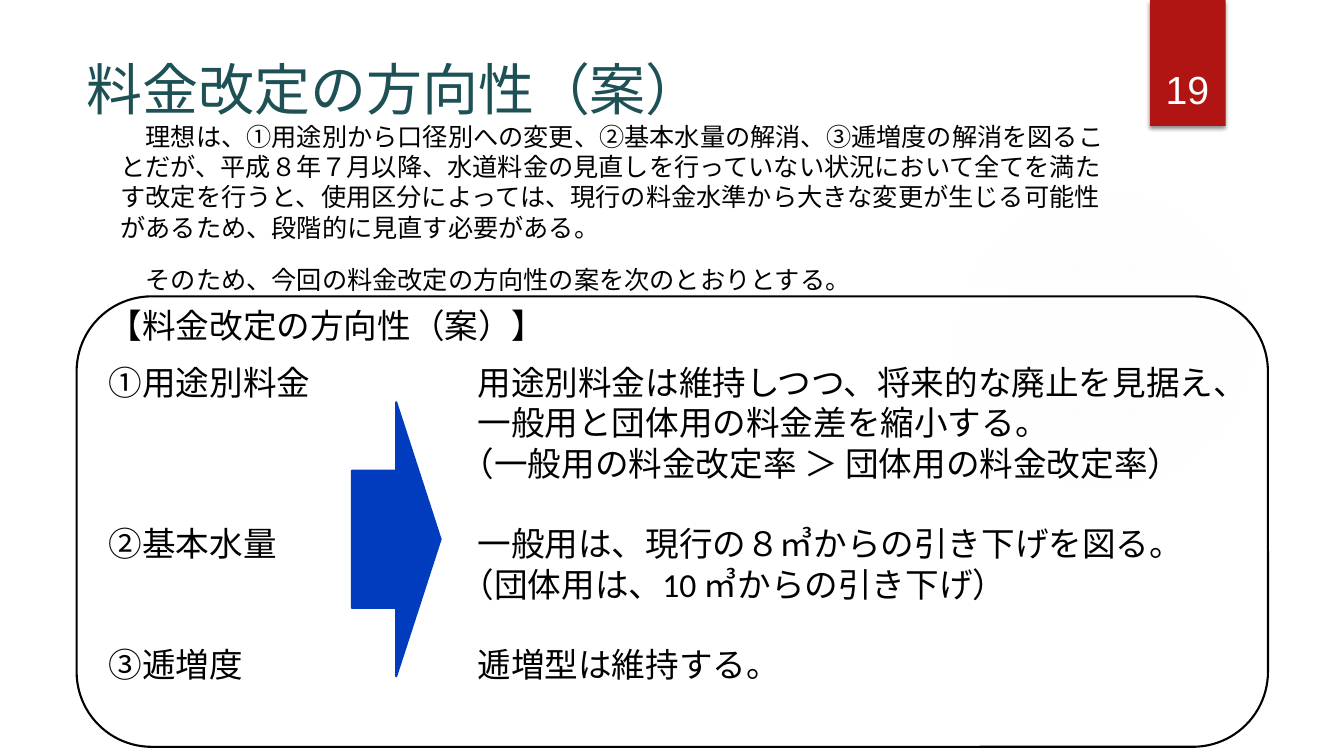
"""Build the slide on the direction of the water tariff revision."""
from dataclasses import dataclass, field
from typing import Any

import pptx
import pptx.dml.color
import pptx.enum.lang
import pptx.enum.shapes
import pptx.enum.text
import pptx.oxml
import pptx.oxml.ns
import pptx.util
from lxml import etree

Pt = pptx.util.Pt
SHAPE = pptx.enum.shapes.MSO_SHAPE
ANCHOR = pptx.enum.text.MSO_ANCHOR
ALIGN = pptx.enum.text.PP_ALIGN
qn = pptx.oxml.ns.qn


@dataclass(frozen=True)
class Theme:
    ink: str = "000000"
    title: str = "1E5155"
    ribbon: str = "B01513"
    arrow: str = "023CBE"
    glow: str = "F3F3F3"
    white: str = "FFFFFF"
    title_size: float = 40
    number_size: float = 28
    lead_size: float = 18
    body_size: float = 24
    outline: float = 1.5
    heading_font: str = "Calibri"
    lead_font: str = "Arial"


@dataclass(frozen=True)
class Para:
    text: str
    left: float = 0
    indent: float = 0
    fmt: dict[str, Any] = field(default_factory=dict)


@dataclass(frozen=True)
class Box:
    at: tuple[float, float, float, float]
    paras: list[Para]
    font: str
    size: float
    color: str
    anchor: Any = ANCHOR.BOTTOM


@dataclass(frozen=True)
class Figure:
    kind: Any
    at: tuple[float, float, float, float]
    fill: str = ""
    line: str = ""


THEME = Theme()
LINE = 28.8
HANG = 12


def gap(lines: int) -> dict[str, Any]:
    """Leave a number of body lines free above a paragraph."""
    return {"space_before": Pt(lines * LINE)}


GLOW = Figure(SHAPE.OVAL, (677.5, 131.8, 221.8, 221.8))
RIBBON = Figure(SHAPE.RECTANGLE, (821.5, 0, 54, 90), THEME.ribbon)
PANEL = Figure(SHAPE.ROUNDED_RECTANGLE, (54.7, 211.7, 851, 321.8), line=THEME.ink)
ARROW = Figure(SHAPE.RIGHT_ARROW, (251.3, 287.3, 63.4, 195.8), THEME.arrow, THEME.arrow)

TITLE = Box((54.7, 23, 462.2, 67.7), [Para("料金改定の方向性（案）")],
            THEME.heading_font, THEME.title_size, THEME.title)
NUMBER = Box((815, 23, 66.2, 60.5), [Para("19", fmt={"alignment": ALIGN.CENTER})],
             THEME.lead_font, THEME.number_size, THEME.white)
LEAD = Box((79, 73, 731.5, 141.1), [
    Para("理想は、①用途別から口径別への変更、②基本水量の解消、③逓増度の解消を図ることだが、"
         "平成８年７月以降、水道料金の見直しを行っていない状況において全てを満たす改定を行うと、"
         "使用区分によっては、現行の料金水準から大きな変更が生じる可能性があるため、"
         "段階的に見直す必要がある。", indent=18, fmt={"space_after": Pt(6)}),
    Para("そのため、今回の料金改定の方向性の案を次のとおりとする。", indent=18,
         fmt={"space_before": Pt(10), "space_after": Pt(6)}),
], THEME.lead_font, THEME.lead_size, THEME.ink)
TOPICS = Box((70.6, 214.3, 330, 310), [
    Para("【料金改定の方向性（案）】", fmt={"space_after": Pt(12)}),
    Para("①用途別料金"),
    Para("②基本水量", fmt=gap(3)),
    Para("③逓増度", fmt=gap(2)),
], THEME.heading_font, THEME.body_size, THEME.ink, ANCHOR.TOP)
POLICIES = Box((322, 255, 599, 269), [
    Para("用途別料金は維持しつつ、将来的な廃止を見据え、", left=HANG),
    Para("一般用と団体用の料金差を縮小する。", left=HANG),
    Para("（一般用の料金改定率 ＞ 団体用の料金改定率）"),
    Para("一般用は、現行の８㎥からの引き下げを図る。", left=HANG, fmt=gap(1)),
    Para("（団体用は、10 ㎥からの引き下げ）"),
    Para("逓増型は維持する。", left=HANG, fmt=gap(1)),
], THEME.heading_font, THEME.body_size, THEME.ink, ANCHOR.TOP)


def rgb(value: str) -> pptx.dml.color.RGBColor:
    """Turn a hex string into a colour."""
    return pptx.dml.color.RGBColor.from_string(value)


def apply(target: Any, values: dict[str, Any]) -> None:
    """Set each named attribute on the target."""
    for name, value in values.items():
        setattr(target, name, value)


def add_figure(s: Any, figure: Figure) -> Any:
    """Draw a preset shape with optional fill and line."""
    sp = s.shapes.add_shape(figure.kind, *map(Pt, figure.at))
    sp.shadow.inherit = False
    if figure.fill:
        sp.fill.solid()
        sp.fill.fore_color.rgb = rgb(figure.fill)
    else:
        sp.fill.background()
    if figure.line:
        sp.line.color.rgb = rgb(figure.line)
        sp.line.width = Pt(THEME.outline)
    else:
        sp.line.fill.background()
    return sp


def add_glow(sp: Any) -> None:
    """Replace the fill with a faint radial gradient."""
    stops = "".join(
        f'<a:gs pos="{pos * 1000}"><a:srgbClr val="{THEME.glow}">'
        f'<a:alpha val="{alpha * 1000}"/></a:srgbClr></a:gs>'
        for pos, alpha in ((0, 7), (36, 6), (69, 0)))
    grad = pptx.oxml.parse_xml(
        f'<a:gradFill {pptx.oxml.ns.nsdecls("a")}><a:gsLst>{stops}</a:gsLst>'
        '<a:path path="circle"><a:fillToRect l="50000" t="50000" r="50000" b="50000"/>'
        '</a:path></a:gradFill>')
    spPr = sp._element.spPr
    spPr.replace(spPr.find(qn("a:noFill")), grad)


def add_shadow(sp: Any) -> None:
    """Give the shape a soft shadow below it."""
    effects = sp._element.spPr.find(qn("a:effectLst"))
    shadow = etree.SubElement(effects, qn("a:outerShdw"), blurRad=str(Pt(3)),
                              dist=str(Pt(2)), dir="5400000", rotWithShape="0")
    color = etree.SubElement(shadow, qn("a:srgbClr"), val=THEME.ink)
    etree.SubElement(color, qn("a:alpha"), val="45000")


def add_box(s: Any, box: Box) -> None:
    """Write a text box with its paragraphs."""
    tf = s.shapes.add_textbox(*map(Pt, box.at)).text_frame
    apply(tf, {"word_wrap": True, "vertical_anchor": box.anchor})
    for i, para in enumerate(box.paras):
        p = tf.add_paragraph() if i else tf.paragraphs[0]
        apply(p, para.fmt)
        pPr = p._p.get_or_add_pPr()
        pPr.set("marL", str(Pt(para.left)))
        pPr.set("indent", str(Pt(para.indent)))
        r = p.add_run()
        r.text = para.text
        apply(r.font, {"name": box.font, "size": Pt(box.size),
                       "language_id": pptx.enum.lang.MSO_LANGUAGE_ID.JAPANESE})
        r.font.color.rgb = rgb(box.color)


def main() -> None:
    """Build and save the slide."""
    prs = pptx.Presentation()
    apply(prs, {"slide_width": Pt(960), "slide_height": Pt(540)})
    s = prs.slides.add_slide(prs.slide_layouts[6])
    add_glow(add_figure(s, GLOW))
    add_shadow(add_figure(s, RIBBON))
    for box in (TITLE, NUMBER, LEAD):
        add_box(s, box)
    add_figure(s, PANEL)
    for box in (TOPICS, POLICIES):
        add_box(s, box)
    add_figure(s, ARROW)
    prs.save("out.pptx")


if __name__ == "__main__":
    main()
